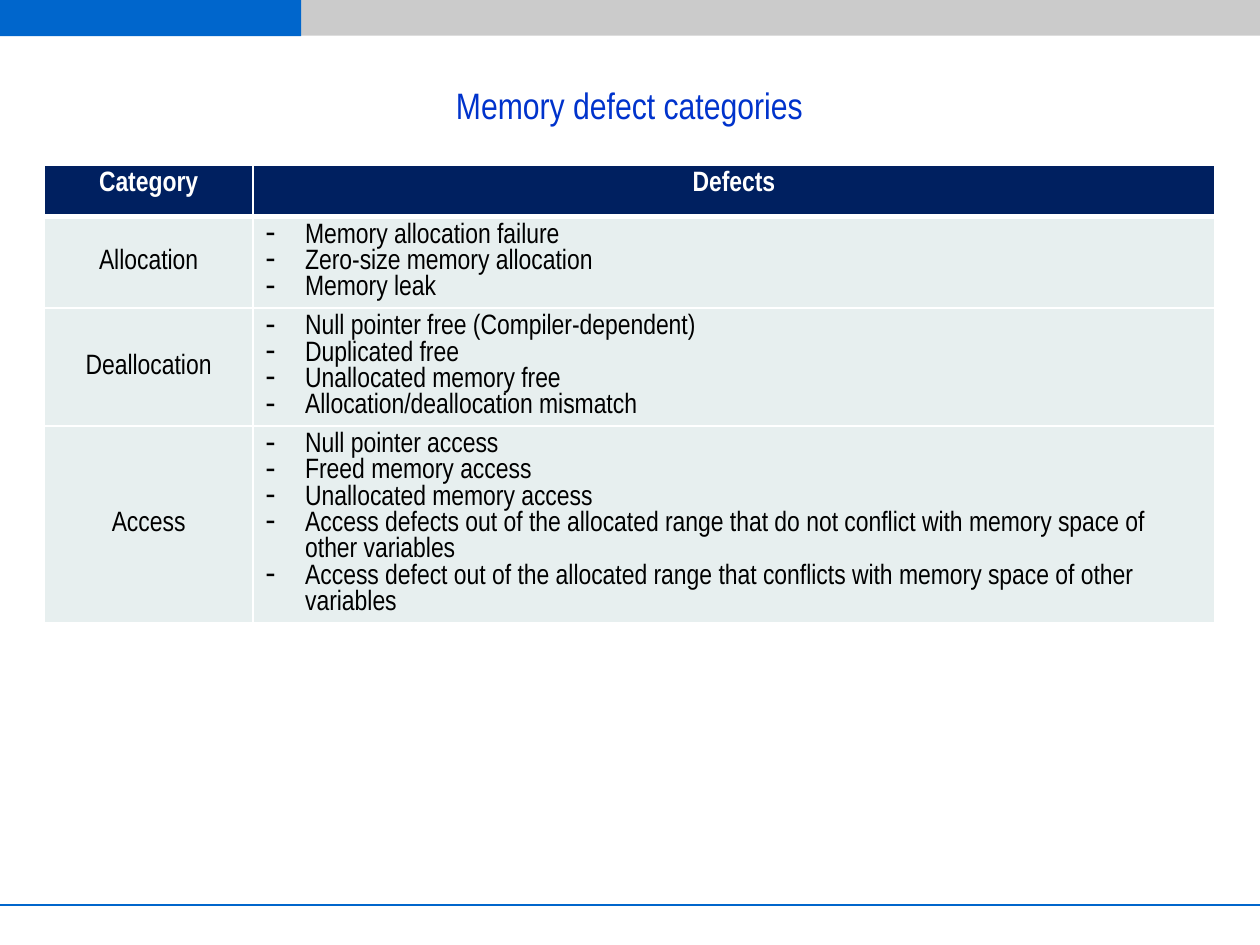
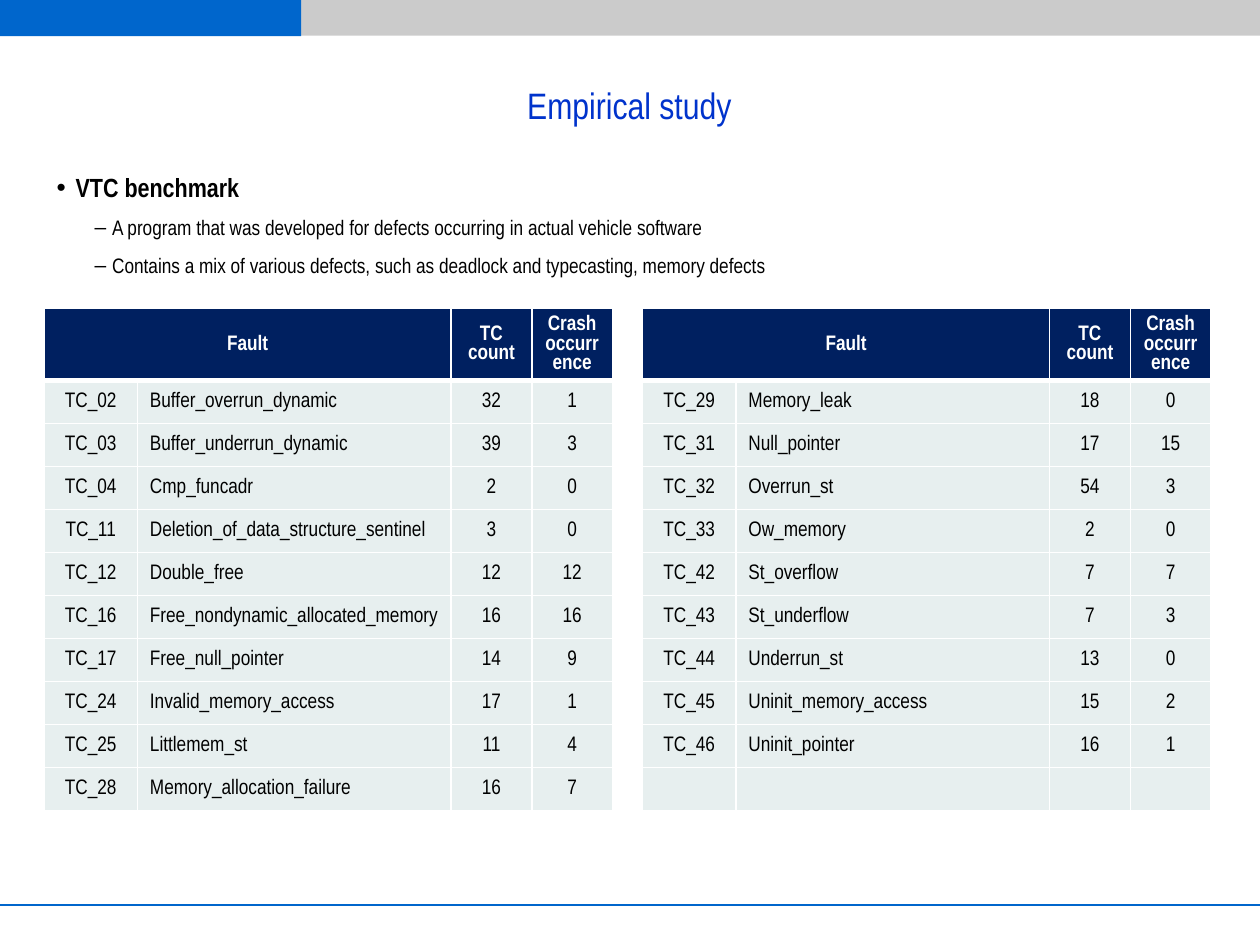
import pptx
import pptx.dml.color
import pptx.enum.shapes
import pptx.enum.text
import pptx.oxml.ns
import pptx.util
from lxml import etree

Pt = pptx.util.Pt
ALIGN = pptx.enum.text.PP_ALIGN
MIDDLE = pptx.enum.text.MSO_ANCHOR.MIDDLE
TOP = pptx.enum.text.MSO_ANCHOR.TOP

# Shared look
FONT = "Arial Narrow"
COLORS = {
    "band_gray": "CBCBCB",
    "band_blue": "0066CC",
    "title": "0033CC",
    "header": "002060",
    "cell": "E7EFEF",
    "white": "FFFFFF",
    "black": "000000",
}
LEFT, CONTENT_TOP, CONTENT_WIDTH = 25.2, 94.3, 668.9

# Slide content
DEFECTS = {
    "Allocation": [
        "Memory allocation failure",
        "Zero-size memory allocation",
        "Memory leak",
    ],
    "Deallocation": [
        "Null pointer free (Compiler-dependent)",
        "Duplicated free",
        "Unallocated memory free",
        "Allocation/deallocation mismatch",
    ],
    "Access": [
        "Null pointer access",
        "Freed memory access",
        "Unallocated memory access",
        "Access defects out of the allocated range that do not conflict "
        "with memory space of other variables",
        "Access defect out of the allocated range that conflicts "
        "with memory space of other variables",
    ],
}
BENCHMARK_POINTS = [
    (0, "VTC benchmark"),
    (1, "A program that was developed for defects occurring in actual vehicle software"),
    (1, "Contains a mix of various defects, such as deadlock and typecasting, memory defects"),
]
FAULTS = [
    ("TC_02", "Buffer_overrun_dynamic", 32, 1),
    ("TC_03", "Buffer_underrun_dynamic", 39, 3),
    ("TC_04", "Cmp_funcadr", 2, 0),
    ("TC_11", "Deletion_of_data_structure_sentinel", 3, 0),
    ("TC_12", "Double_free", 12, 12),
    ("TC_16", "Free_nondynamic_allocated_memory", 16, 16),
    ("TC_17", "Free_null_pointer", 14, 9),
    ("TC_24", "Invalid_memory_access", 17, 1),
    ("TC_25", "Littlemem_st", 11, 4),
    ("TC_28", "Memory_allocation_failure", 16, 7),
    ("TC_29", "Memory_leak", 18, 0),
    ("TC_31", "Null_pointer", 17, 15),
    ("TC_32", "Overrun_st", 54, 3),
    ("TC_33", "Ow_memory", 2, 0),
    ("TC_42", "St_overflow", 7, 7),
    ("TC_43", "St_underflow", 7, 3),
    ("TC_44", "Underrun_st", 13, 0),
    ("TC_45", "Uninit_memory_access", 15, 2),
    ("TC_46", "Uninit_pointer", 16, 1),
]
FAULT_ROWS = 10


def rgb(name):
    return pptx.dml.color.RGBColor.from_string(COLORS[name])


def place(shape, left, top, width, height):
    shape.left, shape.top = Pt(left), Pt(top)
    shape.width, shape.height = Pt(width), Pt(height)


# Text
def add_run(paragraph, text, size, color, bold=False):
    run = paragraph.add_run()
    run.text = text
    run.font.name = FONT
    run.font.size = Pt(size)
    run.font.bold = bold
    run.font.color.rgb = rgb(color)


def set_bullet(paragraph, character, left, hanging):
    properties = paragraph._p.get_or_add_pPr()
    properties.set("marL", str(Pt(left)))
    properties.set("indent", str(-Pt(hanging)))
    bullet = etree.SubElement(properties, pptx.oxml.ns.qn("a:buChar"))
    bullet.set("char", character)


def add_paragraphs(text_frame, count):
    for _ in range(count - 1):
        text_frame.add_paragraph()
    return text_frame.paragraphs


# Bands, footer line and title
def add_band(slide, left, top, width, color):
    band = slide.shapes.add_shape(
        pptx.enum.shapes.MSO_SHAPE.RECTANGLE, Pt(left), Pt(top), Pt(width), Pt(21.6))
    band.shadow.inherit = False
    band.fill.solid()
    band.fill.fore_color.rgb = rgb(color)
    band.line.fill.background()


def add_footer_line(slide):
    line = slide.shapes.add_connector(
        pptx.enum.shapes.MSO_CONNECTOR.STRAIGHT, Pt(0), Pt(517), Pt(720), Pt(517))
    line.line.color.rgb = rgb("band_blue")
    line.line.width = Pt(1)
    etree.SubElement(line._element.spPr, pptx.oxml.ns.qn("a:effectLst"))


def add_titled_slide(presentation, layout, title):
    slide = presentation.slides.add_slide(layout)
    add_band(slide, 172, -1.2, 548, "band_gray")
    add_band(slide, -0.7, -0.9, 172.8, "band_blue")
    add_footer_line(slide)
    place(slide.shapes.title, LEFT, 31.7, CONTENT_WIDTH, 56.9)
    frame = slide.shapes.title.text_frame
    frame.auto_size = pptx.enum.text.MSO_AUTO_SIZE.NONE
    frame.vertical_anchor = MIDDLE
    frame.paragraphs[0].alignment = ALIGN.CENTER
    add_run(frame.paragraphs[0], title, 21, "title")
    return slide


def fill_body(slide, points):
    body = slide.placeholders[1]
    place(body, LEFT, CONTENT_TOP, CONTENT_WIDTH, 419.8)
    frame = body.text_frame
    frame.auto_size = pptx.enum.text.MSO_AUTO_SIZE.NONE
    styles = [(15, True, "•", 10.8, 10.8), (12, False, "–", 31.7, 10.1)]
    for paragraph, (level, text) in zip(add_paragraphs(frame, len(points)), points):
        size, bold, character, left, hanging = styles[level]
        paragraph.level = level
        paragraph.space_after = Pt(4.5)
        set_bullet(paragraph, character, left, hanging)
        add_run(paragraph, text, size, "black", bold)


# Tables
def set_borders(cell, **widths):
    properties = cell._tc.get_or_add_tcPr()
    for side in "LRTB":
        line = etree.SubElement(properties, pptx.oxml.ns.qn("a:ln" + side))
        line.set("w", str(Pt(widths.get(side, 1))))
        fill = etree.SubElement(line, pptx.oxml.ns.qn("a:solidFill"))
        color = etree.SubElement(fill, pptx.oxml.ns.qn("a:srgbClr"))
        color.set("val", COLORS["white"])


def add_table(slide, top, height, column_widths, row_heights):
    frame = slide.shapes.add_table(
        len(row_heights), len(column_widths),
        Pt(LEFT), Pt(top), Pt(sum(column_widths)), Pt(height))
    table = frame.table
    table.first_row = table.horz_banding = False
    for column, width in zip(table.columns, column_widths):
        column.width = Pt(width)
    for row, row_height in zip(table.rows, row_heights):
        row.height = Pt(row_height)
    for index, row in enumerate(table.rows):
        for cell in row.cells:
            set_borders(cell, **{0: {"B": 3}, 1: {"T": 3}}.get(index, {}))
            cell.fill.solid()
            cell.fill.fore_color.rgb = rgb("cell" if index else "header")
            # Keeps empty cells as low as the rest of their row
            cell.text_frame.paragraphs[0]._p.get_or_add_endParaRPr().set("sz", "1200")
    return table


def fill_cell(cell, lines, size, header=False, align=ALIGN.CENTER, anchor=MIDDLE, dash=False):
    cell.vertical_anchor = anchor
    for paragraph, text in zip(add_paragraphs(cell.text_frame, len(lines)), lines):
        paragraph.alignment = align
        if dash:
            set_bullet(paragraph, "-", 22.5, 22.5)
        add_run(paragraph, text, size, "white" if header else "black", header)


def add_defect_table(slide):
    table = add_table(slide, CONTENT_TOP, 319.7, [119.5, 549.4], [29.5] * (len(DEFECTS) + 1))
    for column, heading in enumerate(["Category", "Defects"]):
        fill_cell(table.cell(0, column), [heading], 16, header=True, anchor=TOP)
    for row, (category, defects) in enumerate(DEFECTS.items(), 1):
        fill_cell(table.cell(row, 0), [category], 16)
        fill_cell(table.cell(row, 1), defects, 16, align=ALIGN.LEFT, anchor=TOP, dash=True)


def add_fault_table(slide):
    half = [53.3, 179.3, 46.1, 46.1]
    gap_column = len(half)
    table = add_table(slide, 176.4, 296.6, half + [16.8] + half, [29.5] + [24.6] * FAULT_ROWS)
    for row in table.rows:
        row.cells[gap_column].fill.background()
    for first in (0, gap_column + 1):
        table.cell(0, first).merge(table.cell(0, first + 1))
        for offset, heading in [(0, "Fault"), (2, "TC count"), (3, "Crash occurrence")]:
            fill_cell(table.cell(0, first + offset), [heading], 12, header=True)
    for index, fault in enumerate(FAULTS):
        side, row = divmod(index, FAULT_ROWS)
        for offset, value in enumerate(fault):
            cell = table.cell(row + 1, side * (gap_column + 1) + offset)
            align = ALIGN.LEFT if offset == 1 else ALIGN.CENTER
            fill_cell(cell, [str(value)], 12, align=align)


def main():
    presentation = pptx.Presentation()
    presentation.slide_width, presentation.slide_height = Pt(720), Pt(540)
    title_only, title_and_content = presentation.slide_layouts[5], presentation.slide_layouts[1]

    categories = add_titled_slide(presentation, title_only, "Memory defect categories")
    add_defect_table(categories)

    study = add_titled_slide(presentation, title_and_content, "Empirical study")
    fill_body(study, BENCHMARK_POINTS)
    add_fault_table(study)

    presentation.save("out.pptx")


if __name__ == "__main__":
    main()
